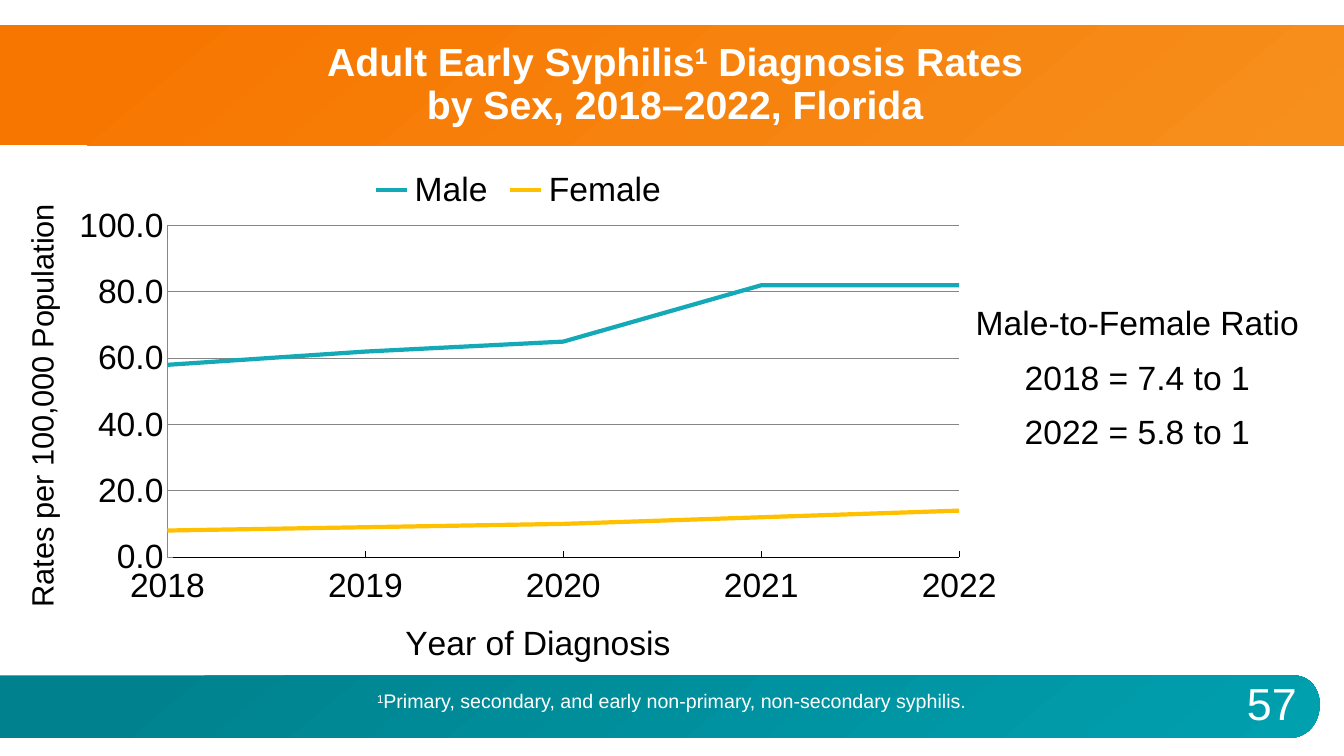
from lxml import etree
from pptx import Presentation
from pptx.chart.data import CategoryChartData
from pptx.dml.color import RGBColor
from pptx.enum.chart import XL_CHART_TYPE, XL_LEGEND_POSITION, XL_TICK_LABEL_POSITION, XL_TICK_MARK
from pptx.enum.text import MSO_ANCHOR, PP_ALIGN
from pptx.enum.shapes import MSO_SHAPE
from pptx.oxml import parse_xml
from pptx.oxml.ns import nsdecls, qn
from pptx.util import Inches, Pt

LINE_CHART = XL_CHART_TYPE.LINE
LEGEND_TOP = XL_LEGEND_POSITION.TOP
LABELS_LOW = XL_TICK_LABEL_POSITION.LOW
TICK_IN, TICK_NONE = XL_TICK_MARK.INSIDE, XL_TICK_MARK.NONE
CENTER, MIDDLE, TOP = PP_ALIGN.CENTER, MSO_ANCHOR.MIDDLE, MSO_ANCHOR.TOP
RECT = MSO_SHAPE.RECTANGLE

FONT = "Arial"
COLORS = {
    "white": "FFFFFF", "black": "000000", "grid": "868686",
    "orange": "F77600", "light_orange": "F78F1C",
    "teal": "00828E", "light_teal": "00A0AF",
    "male": "13A9B7", "female": "FFC000",
}
YEARS = ["2018", "2019", "2020", "2021", "2022"]
RATES = {"Male": (58, 62, 65, 82, 82), "Female": (8, 9, 10, 12, 14)}
RATIOS = ["Male-to-Female Ratio", "2018 = 7.4 to 1", "2022 = 5.8 to 1"]


def rgb(name):
    return RGBColor.from_string(COLORS[name])


def style_font(font, size, color="black", bold=False):
    font.name, font.size, font.bold = FONT, Pt(size), bold
    font.color.rgb = rgb(color)


def add_run(p, text, size, color="black", bold=False, superscript=False):
    r = p.add_run()
    r.text = text
    style_font(r.font, size, color, bold)
    if superscript:
        r.font._element.set("baseline", "30000")


def add_text_frame(s, box, anchor=TOP):
    tf = s.shapes.add_textbox(*map(Inches, box)).text_frame
    tf.word_wrap = True
    tf.vertical_anchor = anchor
    tf.paragraphs[0].alignment = CENTER
    return tf


def fill_band(sp, start, end):
    sp.shadow.inherit = False
    sp.line.fill.background()
    sp.fill.gradient()
    sp.fill.gradient_angle = 310
    for stop, position, color in zip(sp.fill.gradient_stops, (0.09, 1), (start, end)):
        stop.position = position
        stop.color.rgb = rgb(color)


def add_header(s, box):
    x, y, w, h = box
    fill_band(s.shapes.add_shape(RECT, *map(Inches, box)), "orange", "light_orange")
    title = s.shapes.title
    title._element.getparent().append(title._element)  # in front of the band
    title.left, title.top = Inches(x + 0.74), Inches(y)
    title.width, title.height = Inches(w - 1.42), Inches(h)
    tf = title.text_frame
    tf.vertical_anchor = MIDDLE
    p = tf.paragraphs[0]
    p.alignment, p.line_spacing = CENTER, 0.9
    add_run(p, "Adult Early Syphilis", 28, "white", True)
    add_run(p, "1", 28, "white", True, superscript=True)
    add_run(p, " Diagnosis Rates", 28, "white", True)
    p.add_line_break()
    add_run(p, "by Sex, 2018–2022, Florida", 28, "white", True)


def add_footer(s, box):
    x, y, w, h = box
    # Band with a rounded right end, traced along a Bezier curve
    bend = w - 0.29
    curve = [(bend, 0), (bend + 0.4, -0.02), (bend + 0.37, h - 0.01), (bend, h)]
    points = []
    for i in range(25):
        t = i / 24
        weights = ((1 - t) ** 3, 3 * t * (1 - t) ** 2, 3 * t ** 2 * (1 - t), t ** 3)
        points.append(tuple(Inches(start + sum(k * c[axis] for k, c in zip(weights, curve)))
                            for axis, start in enumerate((x, y))))
    points += [(Inches(x), Inches(y + h)), (Inches(x), Inches(y))]
    builder = s.shapes.build_freeform(*points[0])
    builder.add_line_segments(points[1:], close=True)
    fill_band(builder.convert_to_shape(), "teal", "light_teal")

    # Footnote and slide number
    p = add_text_frame(s, (x + 1.75, y + 0.09, 9.83, 0.34)).paragraphs[0]
    add_run(p, "1", 14, "white", superscript=True)
    add_run(p, "Primary, secondary, and early non-primary, non-secondary syphilis.", 14, "white")
    p = add_text_frame(s, (x + 12.07, y - 0.02, 1.09, 0.59), MIDDLE).paragraphs[0]
    add_run(p, "57", 32, "white")


def style_axis(axis, title, title_size, line_color):
    style_font(axis.tick_labels.font, 24)
    axis.major_tick_mark, axis.minor_tick_mark = TICK_IN, TICK_NONE
    axis.format.line.color.rgb = rgb(line_color)
    axis.format.line.width = Pt(0.75)
    add_run(axis.axis_title.text_frame.paragraphs[0], title, title_size)


def set_plot_layout(chart, box):
    area = chart._chartSpace.chart.plotArea
    for old in area.findall(qn("c:layout")):
        area.remove(old)
    layout = parse_xml(f'<c:layout {nsdecls("c")}><c:manualLayout/></c:layout>')
    settings = [("layoutTarget", "inner"), ("xMode", "edge"), ("yMode", "edge")]
    settings += zip("xywh", map(str, box))
    for tag, value in settings:
        etree.SubElement(layout[0], qn(f"c:{tag}")).set("val", value)
    area.insert(0, layout)


def add_rate_chart(s, box):
    data = CategoryChartData(number_format="0.0")
    data.categories = YEARS
    for name, values in RATES.items():
        data.add_series(name, values)
    chart = s.shapes.add_chart(LINE_CHART, *map(Inches, box), data).chart
    style_font(chart.font, 24)
    chart.has_title = False
    chart.has_legend = True
    chart.legend.position = LEGEND_TOP
    chart.legend.include_in_layout = False
    style_font(chart.legend.font, 24)
    chart.plots[0].vary_by_categories = False
    for series in chart.plots[0].series:
        series.smooth = False
        series.format.line.color.rgb = rgb(series.name.lower())
        series.format.line.width = Pt(3)

    # Axes
    years, rates = chart.category_axis, chart.value_axis
    style_axis(years, "Year of Diagnosis", 24, "black")
    years.tick_label_position = LABELS_LOW
    style_axis(rates, "Rates per 100,000 Population", 22, "grid")
    rates.axis_title.text_frame._txBody.bodyPr.set("rot", "-5400000")
    rates.minimum_scale, rates.maximum_scale, rates.major_unit = 0, 100, 20
    rates.tick_labels.number_format = "0.0"
    rates.tick_labels.number_format_is_linked = False
    rates.major_gridlines.format.line.color.rgb = rgb("grid")
    rates.major_gridlines.format.line.width = Pt(0.75)
    # Lines start on the value axis
    rates._element.find(qn("c:majorUnit")).addprevious(
        parse_xml(f'<c:crossBetween {nsdecls("c")} val="midCat"/>'))
    set_plot_layout(chart, (0.15, 0.13, 0.79, 0.63))


def add_ratios(s, box):
    tf = add_text_frame(s, box)
    for i, text in enumerate(RATIOS):
        p = tf.add_paragraph() if i else tf.paragraphs[0]
        p.alignment = CENTER
        if i:
            p.space_before = Pt(10)
        add_run(p, text, 24)


def main():
    prs = Presentation()
    prs.slide_width, prs.slide_height = Inches(13.33), Inches(7.5)
    s = prs.slides.add_slide(prs.slide_layouts[5])
    add_header(s, (0, 0.25, 13.33, 1.19))
    add_footer(s, (0, 6.7, 13.09, 0.62))
    add_rate_chart(s, (0.17, 1.56, 9.94, 5.22))
    add_ratios(s, (9.4, 2.95, 3.76, 1.6))
    prs.save("out.pptx")


if __name__ == "__main__":
    main()
